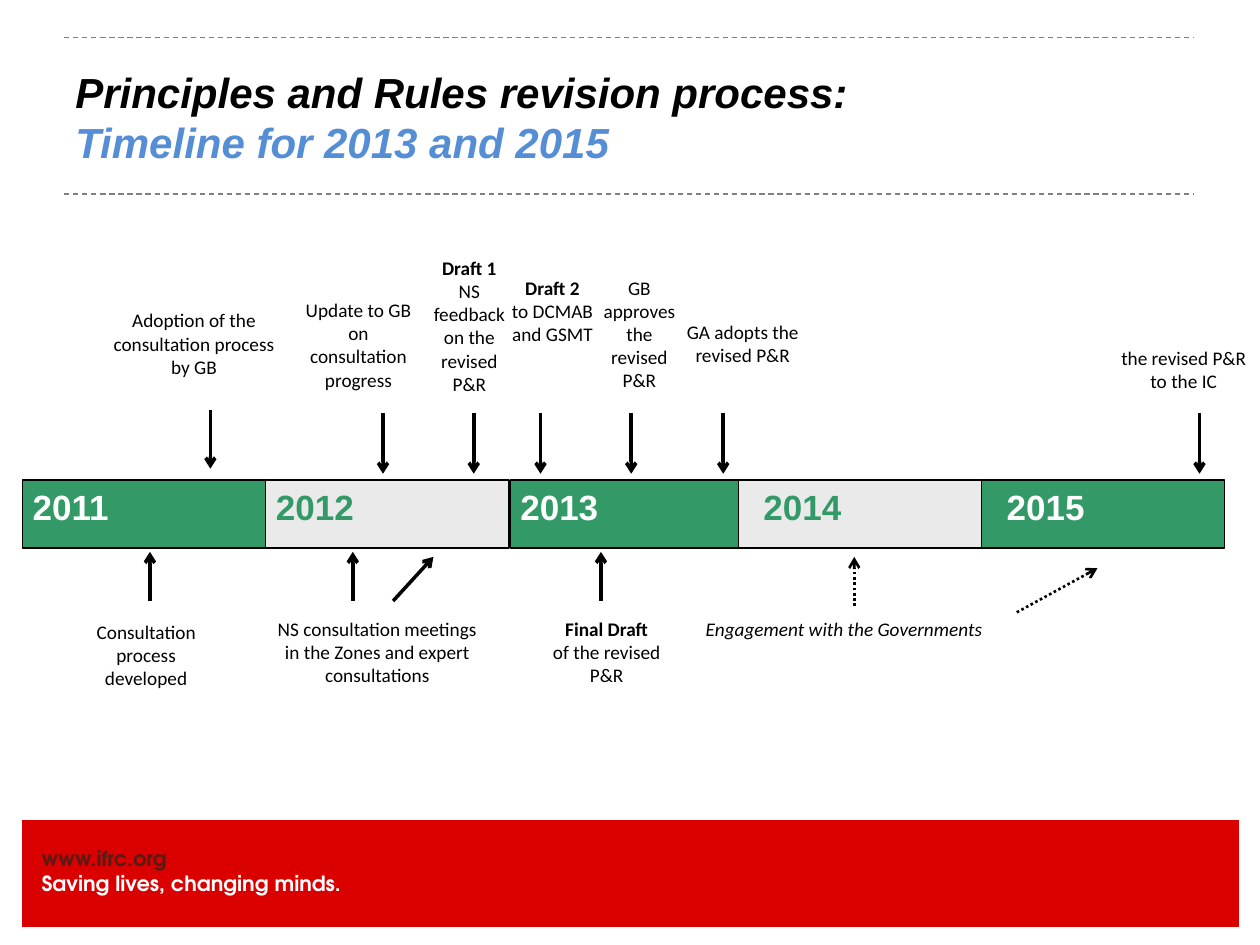
"""Builds the Principles and Rules revision timeline slide."""
import pptx
import pptx.util
import pptx.dml.color
import pptx.enum.dml
import pptx.enum.shapes
import pptx.enum.text
import pptx.oxml
import pptx.oxml.ns

Inches = pptx.util.Inches
DASH = pptx.enum.dml.MSO_LINE
ALIGN = pptx.enum.text.PP_ALIGN
ANCHOR = pptx.enum.text.MSO_ANCHOR

BLACK, WHITE, GREEN, PALE = "000000", "FFFFFF", "339966", "EAEAEA"
RED, BROWN, BLUE, GREY = "DB0000", "551C15", "558ED5", "808080"
PLAIN, BOLD, ITALIC = (False, False), (True, False), (False, True)
SMALL_INSETS, WIDE_INSETS, NO_INSETS = (0.08, 0.04), (0.1, 0.05), (0, 0)

TITLE = [("Principles and Rules revision process:", BLACK), ("Timeline for 2013 and 2015", BLUE)]
FOOTER = [("www.ifrc.org", BROWN), ("Saving lives, changing minds.", WHITE)]
RULES = [0.3, 1.54]

BAR_TOP, BAR_HEIGHT, YEAR_WIDTH = 3.81, 0.54, 1.93
YEARS = [
    ("2011", 0.18, 0.18),
    ("2012", 2.11, 2.11),
    ("2013", 4.05, 4.05),
    ("2014", 5.86, 5.98),
    ("2015", 7.79, 7.91),
]

EVENTS = [
    ((0.79, 2.41, 1.5, 0.94), SMALL_INSETS, [("Adoption of the consultation process by GB", PLAIN)]),
    ((2.32, 2.32, 1.05, 0.93), WIDE_INSETS, [("Update to GB on consultation progress", PLAIN)]),
    ((3.28, 1.8, 0.89, 1.57), SMALL_INSETS,
     [("Draft 1", BOLD), ("NS feedback on the revised P&R", PLAIN)]),
    ((3.96, 2.14, 0.85, 1.14), WIDE_INSETS, [("Draft 2", BOLD), ("to DCMAB and GSMT", PLAIN)]),
    ((4.65, 2.15, 0.85, 1.13), SMALL_INSETS, [("GB approves the revised P&R", PLAIN)]),
    ((5.37, 2.5, 1.05, 1.13), SMALL_INSETS, [("GA adopts the revised P&R", PLAIN)]),
    ((8.79, 2.71, 1.21, 0.61), SMALL_INSETS, [("the revised P&R to the IC", PLAIN)]),
    ((0.49, 4.88, 1.34, 0.94), SMALL_INSETS,
     [("Consultation process", PLAIN), ("developed", PLAIN)]),
    ((1.91, 4.86, 2.17, 0.89), SMALL_INSETS,
     [("NS consultation meetings", PLAIN), ("in the Zones and expert consultations", PLAIN)]),
    ((4.29, 4.86, 1.05, 1.13), SMALL_INSETS,
     [("Final Draft", BOLD), ("of the revised P&R", PLAIN)]),
    ((4.97, 4.86, 3.46, 0.35), SMALL_INSETS, [("Engagement with the Governments", ITALIC)]),
]

DOWN_ARROWS = [3.04, 3.76, 4.29, 5.01, 5.74, 9.52]
UP_ARROWS = [1.19, 2.8, 4.77]
SOLID_ARROWS = (
    [(1.67, 3.25, 1.67, 3.72), (3.12, 4.77, 3.44, 4.42)]
    + [(x, 3.28, x, 3.76) for x in DOWN_ARROWS]
    + [(x, 4.77, x, 4.38) for x in UP_ARROWS]
)
DOTTED_ARROWS = [(6.78, 4.81, 6.78, 4.42), (8.07, 4.86, 8.71, 4.51)]


def rgb(value):
    """Return the colour for a hex string."""
    return pptx.dml.color.RGBColor.from_string(value)


def add_box(slide, place, fill, outline):
    """Add an outlined rectangle."""
    shape = slide.shapes.add_shape(
        pptx.enum.shapes.MSO_SHAPE.RECTANGLE, *map(Inches, place))
    shape.shadow.inherit = False
    shape.fill.solid()
    shape.fill.fore_color.rgb = rgb(fill)
    shape.line.color.rgb = rgb(outline)
    shape.line.width = pptx.util.Pt(0.75)


def add_frame(slide, place, insets, anchor=ANCHOR.TOP):
    """Add a wrapping text box and return its text frame."""
    frame = slide.shapes.add_textbox(*map(Inches, place)).text_frame
    frame.word_wrap = True
    frame.vertical_anchor = anchor
    frame.margin_left = frame.margin_right = Inches(insets[0])
    frame.margin_top = frame.margin_bottom = Inches(insets[1])
    return frame


def add_run(paragraph, text, font, size, color, style):
    """Add one formatted run."""
    run = paragraph.add_run()
    run.text = text
    run.font.name = font
    run.font.size = pptx.util.Pt(size)
    run.font.color.rgb = rgb(color)
    run.font.bold, run.font.italic = style


def next_paragraph(frame, index):
    """Return the first paragraph or a new one."""
    return frame.add_paragraph() if index else frame.paragraphs[0]


def add_line(slide, ends, color, width, dash=None, arrow=False):
    """Add a straight line, with an arrowhead at its end if asked."""
    connector = slide.shapes.add_connector(
        pptx.enum.shapes.MSO_CONNECTOR.STRAIGHT, *map(Inches, ends))
    connector.line.color.rgb = rgb(color)
    connector.line.width = pptx.util.Pt(width)
    if dash:
        connector.line.dash_style = dash
    if arrow:
        head = pptx.oxml.parse_xml(
            f'<a:tailEnd {pptx.oxml.ns.nsdecls("a")} type="arrow"/>')
        connector.line._get_or_add_ln().append(head)
    connector._element.spPr.append(
        pptx.oxml.parse_xml(f'<a:effectLst {pptx.oxml.ns.nsdecls("a")}/>'))


def add_header(slide):
    """Add the two rules and the title."""
    for y in RULES:
        add_line(slide, (0.51, y, 9.48, y), GREY, 0.75, DASH.DASH)
    frame = add_frame(slide, (0.5, 0.3, 9, 1.25), WIDE_INSETS, ANCHOR.MIDDLE)
    paragraph = frame.paragraphs[0]
    for index, (text, color) in enumerate(TITLE):
        if index:
            paragraph.add_line_break()
        add_run(paragraph, text, "Arial", 24, color, (True, True))


def add_footer(slide):
    """Add the red band and its two lines."""
    add_box(slide, (0.17, 6.5, 9.67, 0.86), RED, WHITE)
    frame = add_frame(slide, (0.33, 6.71, 3.42, 0.4), NO_INSETS)
    for index, (text, color) in enumerate(FOOTER):
        add_run(next_paragraph(frame, index), text, "TeX Gyre Adventor", 12, color, BOLD)


def add_timeline(slide):
    """Add the year bar, the events and the arrows."""
    for index, (year, left, text_left) in enumerate(YEARS):
        fill, color = (PALE, GREEN) if index % 2 else (GREEN, WHITE)
        add_box(slide, (left, BAR_TOP, YEAR_WIDTH, BAR_HEIGHT), fill, BLACK)
        frame = add_frame(slide, (text_left, BAR_TOP, 0.96, 0.46), SMALL_INSETS)
        add_run(frame.paragraphs[0], year, "Arial", 20, color, BOLD)
    for place, insets, lines in EVENTS:
        anchor = ANCHOR.MIDDLE if lines[0][0] == "Draft 1" else ANCHOR.TOP
        frame = add_frame(slide, place, insets, anchor)
        for index, (text, style) in enumerate(lines):
            paragraph = next_paragraph(frame, index)
            paragraph.alignment = ALIGN.CENTER
            add_run(paragraph, text, "Calibri", 11, BLACK, style)
    for ends in SOLID_ARROWS:
        add_line(slide, ends, BLACK, 2, arrow=True)
    for ends in DOTTED_ARROWS:
        add_line(slide, ends, BLACK, 1.5, DASH.ROUND_DOT, arrow=True)


def main():
    """Build and save the presentation."""
    presentation = pptx.Presentation()
    presentation.slide_width, presentation.slide_height = Inches(10), Inches(7.5)
    slide = presentation.slides.add_slide(presentation.slide_layouts[6])
    add_footer(slide)
    add_header(slide)
    add_timeline(slide)
    presentation.save("out.pptx")


if __name__ == "__main__":
    main()
